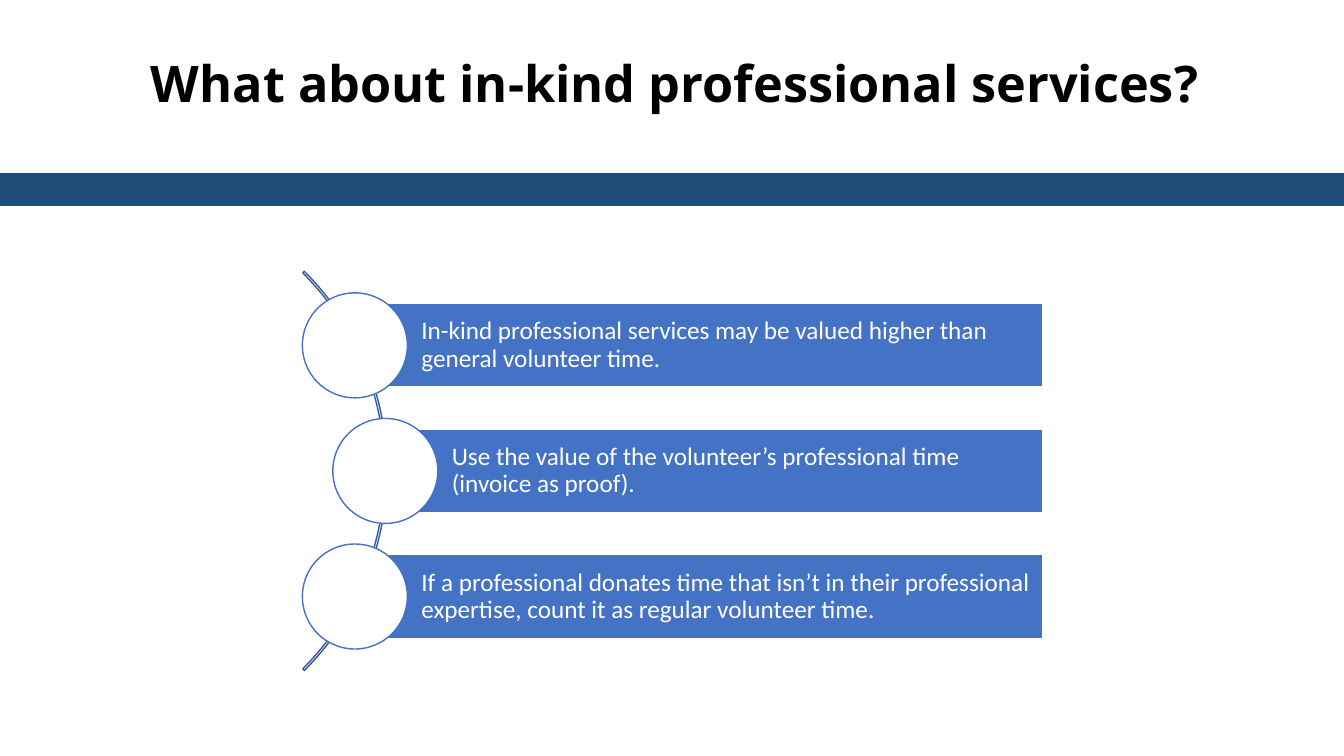
from pptx import Presentation
from pptx.dml.color import RGBColor
from pptx.enum.shapes import MSO_SHAPE
from pptx.enum.text import MSO_ANCHOR, MSO_AUTO_SIZE, PP_ALIGN
from pptx.util import Pt

POINTS = [
    "In-kind professional services may be valued higher than general volunteer time.",
    "Use the value of the volunteer’s professional time (invoice as proof).",
    "If a professional donates time that isn’t in their professional expertise, "
    "count it as regular volunteer time.",
]
CENTERS_X = [253.5, 275.25, 253.5]
MIDDLE_Y = 336.4
PITCH = 89.7
BAR_RIGHT = 744.5
BAR_HEIGHT = 59.8
CIRCLE_SIZE = 75
ARC_SIZE = 403.2

WHITE, BLACK = "FFFFFF", "000000"
BLUE, ARC_BLUE, NAVY = "4472C4", "365B9D", "1F4E79"


def color(hex_value):
    return RGBColor.from_string(hex_value)


def add_outlined_shape(slide, kind, left, top, width, height, fill, line):
    """Add a preset shape with a 1 pt line; a fill of None leaves it hollow."""
    shape = slide.shapes.add_shape(kind, Pt(left), Pt(top), Pt(width), Pt(height))
    shape.shadow.inherit = False
    if fill is None:
        shape.fill.background()
    else:
        shape.fill.solid()
        shape.fill.fore_color.rgb = color(fill)
    shape.line.color.rgb = color(line)
    shape.line.width = Pt(1)
    return shape


def write_text(frame, text, font_name, size, hex_value, align, bold=False):
    frame.word_wrap = True
    frame.text = text
    paragraph = frame.paragraphs[0]
    paragraph.alignment = align
    font = paragraph.runs[0].font
    font.name, font.size, font.bold = font_name, Pt(size), bold
    font.color.rgb = color(hex_value)
    return paragraph


def add_title(slide, text):
    title = slide.shapes.add_textbox(Pt(41.8), Pt(33.8), Pt(880.5), Pt(51))
    write_text(title.text_frame, text, "Open Sans", 36, BLACK, PP_ALIGN.CENTER, True)
    title.text_frame.auto_size = MSO_AUTO_SIZE.SHAPE_TO_FIT_TEXT


def add_arc(slide):
    arc = add_outlined_shape(slide, MSO_SHAPE.BLOCK_ARC, -126.7, MIDDLE_Y - ARC_SIZE / 2,
                             ARC_SIZE, ARC_SIZE, None, ARC_BLUE)
    for index, value in enumerate([189, 27, 0.004]):
        arc.adjustments[index] = value


def add_point(slide, text, center_x, center_y):
    """Add a text bar that starts at the centre of its circle."""
    bar = add_outlined_shape(slide, MSO_SHAPE.RECTANGLE, center_x, center_y - BAR_HEIGHT / 2,
                             BAR_RIGHT - center_x, BAR_HEIGHT, BLUE, WHITE)
    frame = bar.text_frame
    frame.margin_left = Pt(47.5)
    frame.margin_top = frame.margin_right = frame.margin_bottom = Pt(3.6)
    frame.vertical_anchor = MSO_ANCHOR.MIDDLE
    paragraph = write_text(frame, text, "Calibri", 18, WHITE, PP_ALIGN.LEFT)
    paragraph.line_spacing = 0.9
    radius = CIRCLE_SIZE / 2
    add_outlined_shape(slide, MSO_SHAPE.OVAL, center_x - radius, center_y - radius,
                       CIRCLE_SIZE, CIRCLE_SIZE, WHITE, BLUE)


def main():
    presentation = Presentation()
    presentation.slide_width, presentation.slide_height = Pt(960), Pt(540)
    slide = presentation.slides.add_slide(presentation.slide_layouts[6])
    add_title(slide, "What about in-kind professional services?")
    add_outlined_shape(slide, MSO_SHAPE.RECTANGLE, 0, 124.3, 960, 22.3, NAVY, NAVY)
    add_arc(slide)
    for index, (text, center_x) in enumerate(zip(POINTS, CENTERS_X)):
        add_point(slide, text, center_x, MIDDLE_Y + (index - 1) * PITCH)
    presentation.save("out.pptx")


if __name__ == "__main__":
    main()
